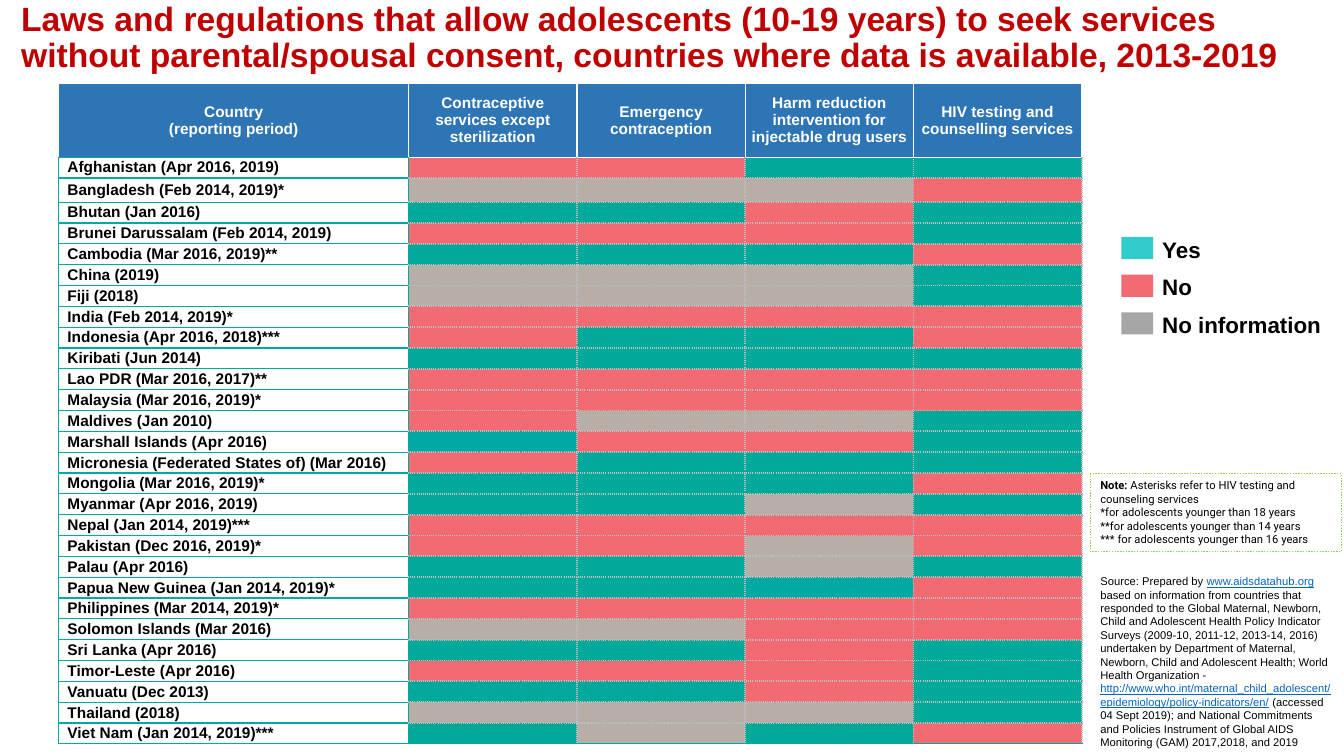
"""Build a slide on adolescents' access to health services without consent."""
from dataclasses import dataclass

from lxml import etree
from pptx import Presentation
from pptx.dml.color import RGBColor
from pptx.enum.dml import MSO_LINE
from pptx.enum.shapes import MSO_SHAPE
from pptx.enum.text import MSO_ANCHOR, MSO_AUTO_SIZE, PP_ALIGN
from pptx.oxml.ns import qn
from pptx.util import Cm, Pt

RECT = MSO_SHAPE.RECTANGLE
DOTTED = MSO_LINE.ROUND_DOT
TOP, MIDDLE = MSO_ANCHOR.TOP, MSO_ANCHOR.MIDDLE
LEFT, CENTER = PP_ALIGN.LEFT, PP_ALIGN.CENTER
NO_AUTOFIT = MSO_AUTO_SIZE.NONE

TITLE = (
    "Laws and regulations that allow adolescents (10-19 years) to seek services "
    "without parental/spousal consent, countries where data is available, 2013-2019"
)
HEADERS = [
    "Country\n(reporting period)",
    "Contraceptive services except sterilization",
    "Emergency contraception",
    "Harm reduction intervention for injectable drug users",
    "HIV testing and counselling services",
]
COUNTRIES = [
    ("Afghanistan (Apr 2016, 2019)", "NNYY"),
    ("Bangladesh (Feb 2014, 2019)*", "---N"),
    ("Bhutan (Jan 2016)", "YYNY"),
    ("Brunei Darussalam (Feb 2014, 2019)", "NNNY"),
    ("Cambodia (Mar 2016, 2019)**", "YYYN"),
    ("China (2019)", "---Y"),
    ("Fiji (2018)", "---Y"),
    ("India (Feb 2014, 2019)*", "NNNN"),
    ("Indonesia (Apr 2016, 2018)***", "NYYN"),
    ("Kiribati (Jun 2014)", "YYYY"),
    ("Lao PDR (Mar 2016, 2017)**", "NNNN"),
    ("Malaysia (Mar 2016, 2019)*", "NNNN"),
    ("Maldives (Jan 2010)", "N--Y"),
    ("Marshall Islands (Apr 2016)", "yNNY"),
    ("Micronesia (Federated States of) (Mar 2016)", "NYYY"),
    ("Mongolia (Mar 2016, 2019)*", "YYYN"),
    ("Myanmar (Apr 2016, 2019)", "YY-Y"),
    ("Nepal (Jan 2014, 2019)***", "NNNN"),
    ("Pakistan (Dec 2016, 2019)*", "NN-N"),
    ("Palau (Apr 2016)", "YY-Y"),
    ("Papua New Guinea (Jan 2014, 2019)*", "YYyN"),
    ("Philippines (Mar 2014, 2019)*", "NNNN"),
    ("Solomon Islands (Mar 2016)", "--NN"),
    ("Sri Lanka (Apr 2016)", "YYNY"),
    ("Timor-Leste (Apr 2016)", "NNNY"),
    ("Vanuatu (Dec 2013)", "YYNY"),
    ("Thailand (2018)", "---Y"),
    ("Viet Nam (Jan 2014, 2019)***", "Y-YN"),
]
LEGEND = [("Yes", "33CCCC"), ("No", "F26B73"), ("No information", "A6A6A6")]
NOTE = [
    [("Note:", "bold"), (" Asterisks refer to HIV testing and counseling services", "")],
    [("*for adolescents younger than 18 years", "")],
    [("**for adolescents younger than 14 years", "")],
    [("*** for adolescents younger than 16 years", "")],
]
SOURCE = [[
    ("Source: Prepared by ", ""),
    ("www.aidsdatahub.org", "link"),
    (" based on information from countries that responded to the Global Maternal, "
     "Newborn, Child and Adolescent Health Policy Indicator Surveys (2009-10, 2011-12, "
     "2013-14, 2016) undertaken by Department of Maternal, Newborn, Child and Adolescent "
     "Health; World Health Organization - ", ""),
    ("http://www.who.int/maternal_child_adolescent/epidemiology/policy-indicators/en/", "link"),
    (" (accessed 04 Sept 2019); and National Commitments and Policies Instrument of "
     "Global AIDS Monitoring (GAM) 2017,2018, and 2019", ""),
]]


@dataclass(frozen=True)
class Theme:
    font: str = "Arial"
    note_font: str = "Roboto"
    title_size: int = 24
    legend_size: int = 16
    table_size: int = 11
    small_size: int = 8
    title: str = "C00000"
    text: str = "000000"
    white: str = "FFFFFF"
    link: str = "0563C1"
    header: str = "2E75B6"
    teal: str = "00A9A4"
    grid: str = "BFBFBF"
    note_line: str = "92D050"


T = Theme()
ANSWER_FILLS = {"Y": "00A99A", "y": T.teal, "N": "F26B73", "-": "B6AEA7"}
TEAL, WHITE, DOTS = (T.teal, 1, "solid"), (T.white, 1, "solid"), (T.grid, 1.5, "sysDot")

HEADER_H, TALL_H, TABLE_H = 1.85, 0.61, 16.66
ROW_H = (TABLE_H - HEADER_H - TALL_H) / (len(COUNTRIES) - 1)
COL_WIDTHS = [8.82] + [4.24] * 4
LEGEND_STEP = 0.95


def rgb(value):
    return RGBColor.from_string(value)


def add_run(p, text, size, color=T.text, bold=False, font=T.font, underline=None):
    r = p.add_run()
    r.text = text
    f = r.font
    f.name, f.size, f.bold, f.underline = font, Pt(size), bold, underline
    f.color.rgb = rgb(color)


def add_box(s, x, y, w, h, fill=None, line=None):
    sp = s.shapes.add_shape(RECT, Cm(x), Cm(y), Cm(w), Cm(h))
    sp.shadow.inherit = False
    if fill:
        sp.fill.solid()
        sp.fill.fore_color.rgb = rgb(fill)
    else:
        sp.fill.background()
    if line:
        sp.line.color.rgb = rgb(line)
        sp.line.width = Pt(1)
        sp.line.dash_style = DOTTED
    else:
        sp.line.fill.background()
    return sp


def write_paragraphs(sp, paragraphs, font):
    tf = sp.text_frame
    tf.word_wrap, tf.vertical_anchor = True, TOP
    for i, runs in enumerate(paragraphs):
        p = tf.add_paragraph() if i else tf.paragraphs[0]
        p.alignment = LEFT
        for text, style in runs:
            link = style == "link"
            add_run(p, text, T.small_size, T.link if link else T.text,
                    style == "bold", font, link or None)


def format_cell(cell, fill, borders):
    cell.margin_left = cell.margin_right = cell.margin_top = cell.margin_bottom = 0
    cell.vertical_anchor = MIDDLE
    tc_pr = cell._tc.get_or_add_tcPr()
    for side, (color, width, dash) in zip("LRTB", borders):
        ln = etree.SubElement(tc_pr, qn(f"a:ln{side}"), w=str(Pt(width)))
        solid = etree.SubElement(ln, qn("a:solidFill"))
        etree.SubElement(solid, qn("a:srgbClr"), val=color)
        etree.SubElement(ln, qn("a:prstDash"), val=dash)
    if fill:
        cell.fill.solid()
        cell.fill.fore_color.rgb = rgb(fill)
    else:
        cell.fill.background()


def add_country_table(s):
    frame = s.shapes.add_table(len(COUNTRIES) + 1, len(HEADERS), Cm(1.48), Cm(2.11),
                               Cm(sum(COL_WIDTHS)), Cm(TABLE_H))
    table = frame.table
    for col, width in zip(table.columns, COL_WIDTHS):
        col.width = Cm(width)
    for i, row in enumerate(table.rows):
        row.height = Cm({0: HEADER_H, 2: TALL_H}.get(i, ROW_H))
    for c, header in enumerate(HEADERS):
        cell = table.cell(0, c)
        format_cell(cell, T.header, (WHITE, WHITE, WHITE, WHITE if c else TEAL))
        p = cell.text_frame.paragraphs[0]
        p.alignment = CENTER
        for i, line in enumerate(header.split("\n")):
            if i:
                p.add_line_break()
            add_run(p, line, T.table_size, T.white, True)
    for r, (country, answers) in enumerate(COUNTRIES, 1):
        cell = table.cell(r, 0)
        format_cell(cell, None, (TEAL,) * 4)
        cell.margin_left = Cm(0.22)
        add_run(cell.text_frame.paragraphs[0], country, T.table_size, bold=True)
        for c, answer in enumerate(answers, 1):
            cell = table.cell(r, c)
            format_cell(cell, ANSWER_FILLS[answer],
                        (TEAL if c == 1 else DOTS, DOTS, WHITE if r == 1 else DOTS,
                         TEAL if r == len(COUNTRIES) else DOTS))
            etree.SubElement(cell.text_frame.paragraphs[0]._p, qn("a:endParaRPr"),
                             sz=str(T.table_size * 100))


def add_legend(s):
    for i, (label, color) in enumerate(LEGEND):
        y = 5.97 + i * LEGEND_STEP
        add_box(s, 28.26, y, 0.8, 0.56, fill=color)
        tf = s.shapes.add_textbox(Cm(29.04), Cm(y - 0.15), Cm(4.82), Cm(0.94)).text_frame
        tf.word_wrap = True
        add_run(tf.paragraphs[0], label, T.legend_size, bold=True)


def main():
    prs = Presentation()
    prs.slide_width, prs.slide_height = Cm(33.87), Cm(19.05)
    s = prs.slides.add_slide(prs.slide_layouts[5])
    title = s.shapes.title
    title.left, title.top, title.width, title.height = Cm(0.28), Cm(0), Cm(33.2), Cm(1.96)
    tf = title.text_frame
    tf.word_wrap, tf.auto_size, tf.vertical_anchor = True, NO_AUTOFIT, MIDDLE
    p = tf.paragraphs[0]
    p.alignment, p.line_spacing = LEFT, 0.9
    add_run(p, TITLE, T.title_size, T.title, True)
    add_legend(s)
    write_paragraphs(add_box(s, 27.48, 14.35, 6.35, 4.7, fill=T.white), SOURCE, T.font)
    add_country_table(s)
    write_paragraphs(add_box(s, 27.48, 11.94, 6.33, 1.96, line=T.note_line), NOTE, T.note_font)
    prs.save("out.pptx")


if __name__ == "__main__":
    main()
